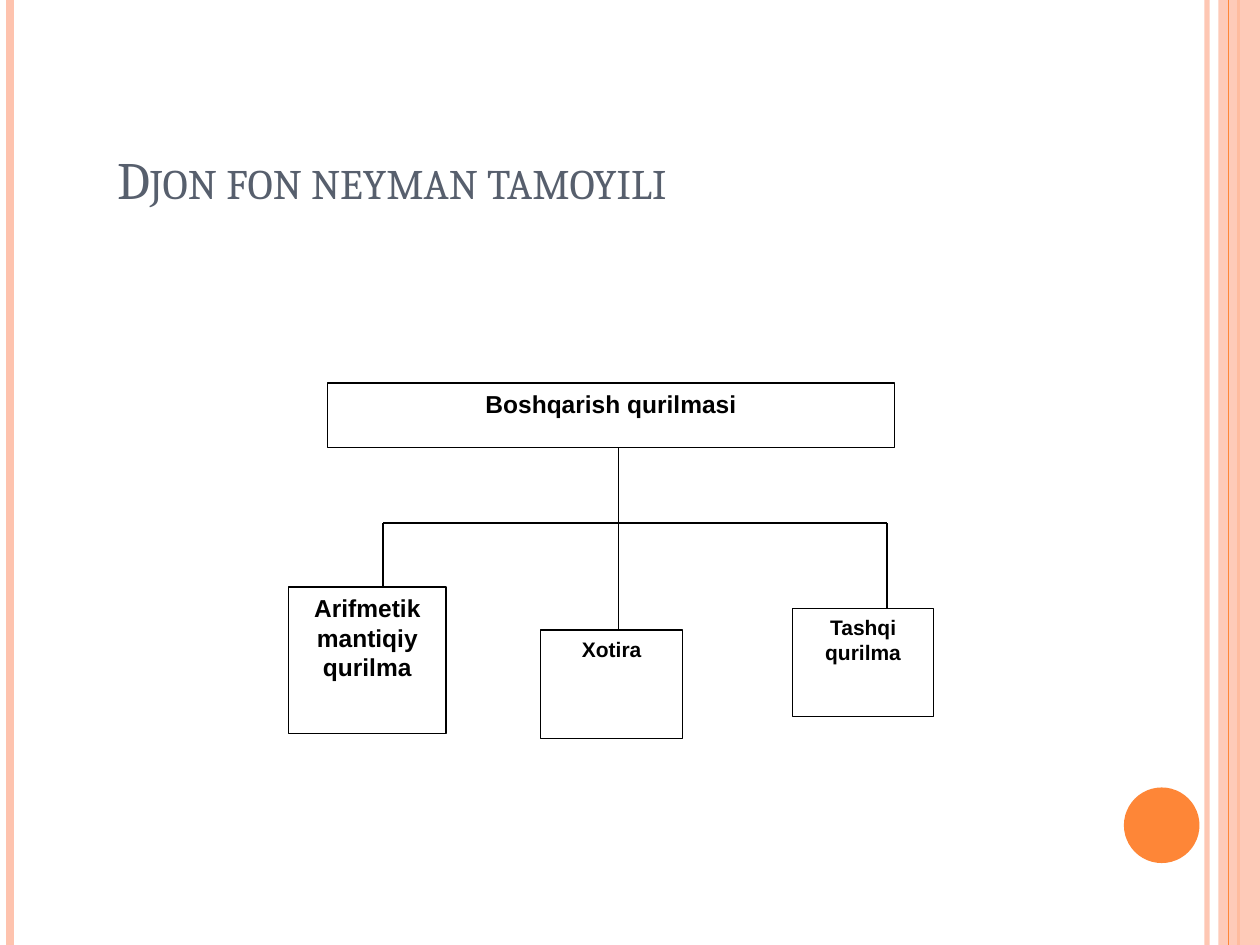
from dataclasses import dataclass

from lxml import etree
from pptx import Presentation
from pptx import util as u
from pptx.dml.color import RGBColor
from pptx.enum import shapes, text
from pptx.oxml.ns import qn

COLORS = {"peach": "FEC3AE", "orange": "FE8637", "slate": "575F6D",
          "ink": "000000", "paper": "FFFFFF"}


@dataclass
class Unit:
    label: str
    left: float
    top: float
    width: float
    height: float
    size: int


@dataclass
class Rule:
    x1: float
    y1: float
    x2: float
    y2: float
    color: str = "ink"
    weight: float = 0.75
    opacity: int = 100


def rgb(name: str) -> RGBColor:
    return RGBColor.from_string(COLORS[name])


def set_opacity(holder, percent: int) -> None:
    color = next(holder.iter(qn("a:srgbClr")))
    etree.SubElement(color, qn("a:alpha"), val=str(percent * 1000))


def apply(target, settings: dict) -> None:
    for key, value in settings.items():
        setattr(target, key, value)


def draw_rule(canvas, rule: Rule) -> None:
    ends = [u.Inches(v) for v in (rule.x1, rule.y1, rule.x2, rule.y2)]
    line = canvas.add_connector(shapes.MSO_CONNECTOR.STRAIGHT, *ends)
    line.line.color.rgb = rgb(rule.color)
    line.line.width = u.Pt(rule.weight)
    properties = line._element.spPr
    if rule.opacity < 100:
        set_opacity(properties, rule.opacity)
    etree.SubElement(properties, qn("a:effectLst"))


def draw_shape(canvas, kind, left: float, top: float, width: float, height: float, fill: str):
    shape = canvas.add_shape(kind, *[u.Inches(v) for v in (left, top, width, height)])
    shape.shadow.inherit = False
    shape.fill.solid()
    shape.fill.fore_color.rgb = rgb(fill)
    shape.line.fill.background()
    return shape


def draw_unit(canvas, unit: Unit) -> None:
    box = draw_shape(canvas, shapes.MSO_SHAPE.RECTANGLE,
                     unit.left, unit.top, unit.width, unit.height, "paper")
    box.line.color.rgb = rgb("ink")
    box.line.width = u.Pt(0.75)
    apply(box.text_frame, {"word_wrap": True, "vertical_anchor": text.MSO_ANCHOR.TOP})
    paragraph = box.text_frame.paragraphs[0]
    paragraph.alignment = text.PP_ALIGN.CENTER
    run = paragraph.add_run()
    run.text = unit.label
    apply(run.font, {"name": "Arial", "size": u.Pt(unit.size), "bold": True})
    run.font.color.rgb = rgb("ink")


def draw_frame(canvas) -> None:
    def stripe(x: float, color: str, weight: float, opacity: int = 100) -> None:
        draw_rule(canvas, Rule(x, 0, x, 7.5, color, weight, opacity))

    stripe(9.58, "peach", 3, 93)
    stripe(0.08, "peach", 4.5)
    stripe(9.83, "orange", 1.5)
    band = draw_shape(canvas, shapes.MSO_SHAPE.RECTANGLE, 9.67, 0, 0.33, 7.5, "peach")
    set_opacity(band._element.spPr, 87)
    stripe(9.75, "orange", 0.75)
    draw_shape(canvas, shapes.MSO_SHAPE.OVAL, 8.92, 6.25, 0.6, 0.6, "orange")


def write_title(title, wording: str) -> None:
    apply(title, {"left": u.Inches(0.83), "top": u.Inches(0.96),
                  "width": u.Inches(8.17), "height": u.Inches(1.25)})
    apply(title.text_frame, {"word_wrap": True, "auto_size": text.MSO_AUTO_SIZE.NONE,
                             "vertical_anchor": text.MSO_ANCHOR.BOTTOM,
                             "margin_bottom": u.Inches(0.54)})
    paragraph = title.text_frame.paragraphs[0]
    paragraph.alignment = text.PP_ALIGN.LEFT
    run = paragraph.add_run()
    run.text = wording
    apply(run.font, {"name": "Cambria", "size": u.Pt(30)})
    run.font.color.rgb = rgb("slate")
    run._r.get_or_add_rPr().set("cap", "small")


def draw_diagram(canvas) -> None:
    control = Unit("Boshqarish qurilmasi", 2.6, 3.04, 4.5, 0.51, 14)
    arithmetic = Unit("Arifmetik mantiqiy qurilma", 2.29, 4.66, 1.25, 1.16, 14)
    memory = Unit("Xotira", 4.29, 5, 1.13, 0.86, 12)
    external = Unit("Tashqi qurilma", 6.29, 4.83, 1.12, 0.86, 12)
    branch_y = 4.15
    drops = {3.04: arithmetic, 4.91: memory, 7.04: external}

    draw_rule(canvas, Rule(min(drops), branch_y, max(drops), branch_y))
    draw_rule(canvas, Rule(4.91, 3.46, 4.91, branch_y))
    for x, unit in drops.items():
        draw_rule(canvas, Rule(x, branch_y, x, unit.top))
    for unit in (control, *drops.values()):
        draw_unit(canvas, unit)


def main() -> None:
    deck = Presentation()
    deck.slide_width, deck.slide_height = u.Inches(10), u.Inches(7.5)
    slide = deck.slides.add_slide(deck.slide_layouts[5])
    draw_frame(slide.shapes)
    write_title(slide.shapes.title, "Djon fon neyman tamoyili")
    draw_diagram(slide.shapes.add_group_shape().shapes)
    deck.save("out.pptx")


if __name__ == "__main__":
    main()
